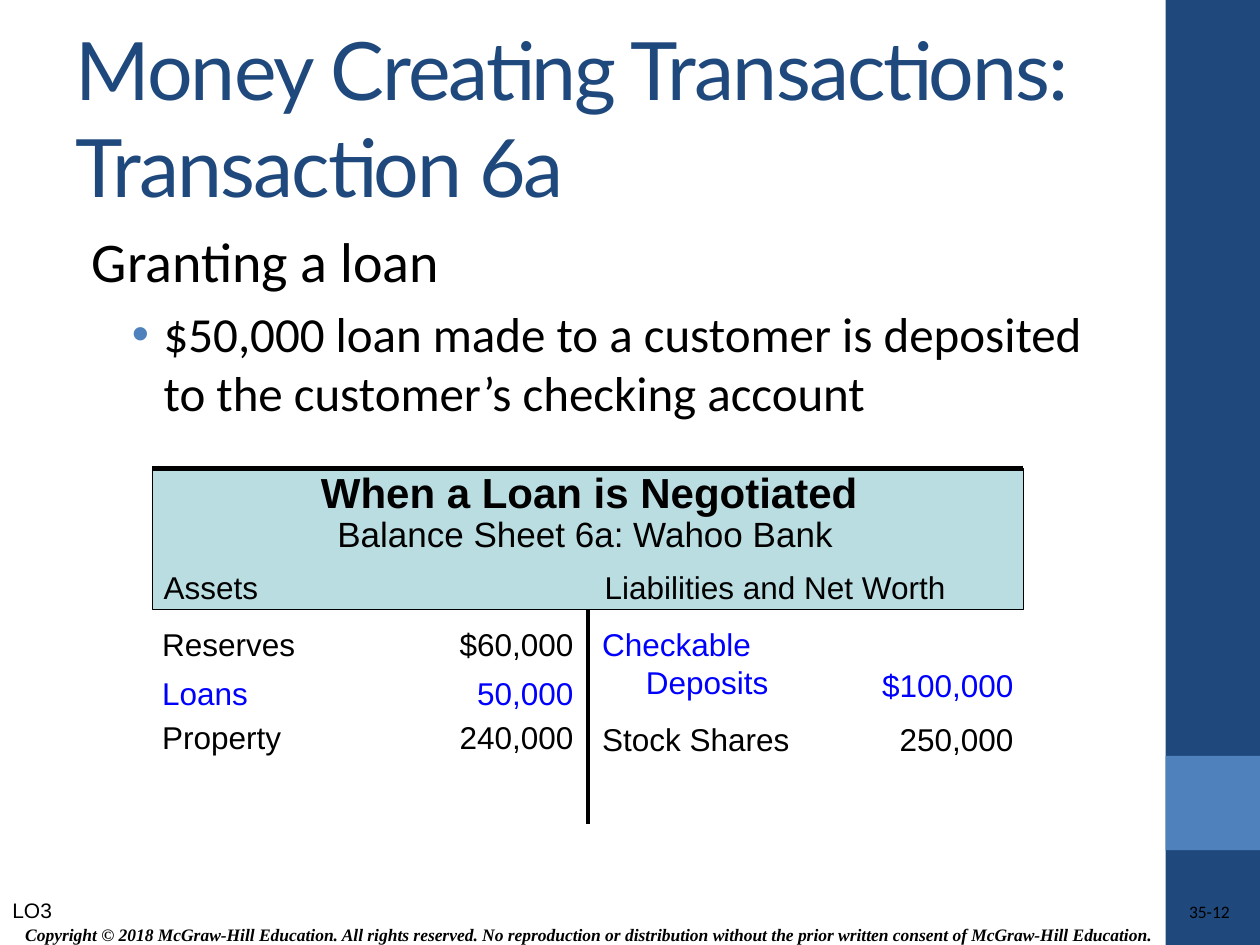
from dataclasses import dataclass

from lxml.etree import SubElement
from pptx import Presentation
from pptx.dml.color import RGBColor
from pptx.enum.shapes import MSO_CONNECTOR, MSO_SHAPE
from pptx.enum.text import MSO_ANCHOR, PP_ALIGN
from pptx.oxml.ns import qn
from pptx.util import Cm, Pt


@dataclass(frozen=True)
class Theme:
    navy: str = "1F497D"
    blue: str = "4F81BD"
    teal: str = "BADDE1"
    black: str = "000000"
    changed: str = "0000FF"
    heading_font: str = "Lato"
    body_font: str = "Calibri"
    sheet_font: str = "Arial"
    legal_font: str = "Times New Roman"
    title: int = 46
    topic: int = 32
    detail: int = 28
    sheet_title: int = 24
    sheet_subtitle: int = 20
    entry: int = 18
    objective: int = 12
    small: int = 10


THEME = Theme()
ENTRY_HEIGHT = 1.02
AMOUNT_WIDTH = 2.9
ASSETS_LEFT, ASSETS_RIGHT = 3.02, 11.81
LIABILITIES_LEFT, LIABILITIES_RIGHT = 11.89, 20.68


def set_all(target, values):
    for name, value in values.items():
        setattr(target, name, value)


def add_words(paragraph, words, size, font, color=THEME.black, **style):
    run = paragraph.add_run()
    run.text = words
    set_all(run.font, {"size": Pt(size), "name": font, **style})
    run.font.color.rgb = RGBColor.from_string(color)
    return run


def add_frame(slide, left, top, width, height, **layout):
    box = slide.shapes.add_textbox(Cm(left), Cm(top), Cm(width), Cm(height))
    set_all(box.text_frame, {"word_wrap": True, **layout})
    return box.text_frame


def add_rectangle(slide, left, top, width, height, fill, outline=None):
    rectangle = slide.shapes.add_shape(
        MSO_SHAPE.RECTANGLE, Cm(left), Cm(top), Cm(width), Cm(height))
    rectangle.shadow.inherit = False
    rectangle.fill.solid()
    rectangle.fill.fore_color.rgb = RGBColor.from_string(fill)
    if outline:
        rectangle.line.color.rgb = RGBColor.from_string(outline)
        rectangle.line.width = Pt(0.75)
    else:
        rectangle.line.fill.background()
    return rectangle


def add_rule(slide, start, end, weight):
    rule = slide.shapes.add_connector(
        MSO_CONNECTOR.STRAIGHT, *(Cm(value) for value in start + end))
    rule.line.color.rgb = RGBColor.from_string(THEME.black)
    rule.line.width = Pt(weight)
    SubElement(rule._element.spPr, qn("a:effectLst"))
    return rule


def indent(paragraph, margin, hanging=0.0):
    properties = paragraph._p.get_or_add_pPr()
    properties.set("marL", str(Cm(margin)))
    properties.set("indent", str(Cm(-hanging)))
    return properties


def add_bullet(properties):
    color = SubElement(properties, qn("a:buClr"))
    SubElement(color, qn("a:srgbClr")).set("val", THEME.blue)
    SubElement(properties, qn("a:buFont")).set("typeface", THEME.sheet_font)
    SubElement(properties, qn("a:buChar")).set("char", "•")


def add_entry(slide, words, left, top, width, color=THEME.black,
              size=THEME.entry, height=ENTRY_HEIGHT, **style):
    frame = add_frame(slide, left, top, width, height, word_wrap=False)
    add_words(frame.paragraphs[0], words, size, THEME.sheet_font, color, **style)
    return frame


def add_amount(slide, words, right, top, color, width=AMOUNT_WIDTH):
    frame = add_entry(slide, words, right - width, top, width, color)
    frame.paragraphs[0].alignment = PP_ALIGN.RIGHT


def add_side_panel(slide):
    add_rectangle(slide, 23.5, 0, 1.9, 19.05, THEME.navy)
    add_rectangle(slide, 23.5, 15.24, 1.9, 1.9, THEME.blue)


def add_footer(slide):
    legal = add_frame(slide, 0.15, 18.49, 23.42, 0.71,
                      vertical_anchor=MSO_ANCHOR.MIDDLE).paragraphs[0]
    legal.alignment = PP_ALIGN.CENTER
    add_words(legal, "Copyright © 2018 McGraw-Hill Education. All rights reserved. "
              "No reproduction or distribution without the prior written consent "
              "of McGraw-Hill Education.",
              THEME.small, THEME.legal_font, bold=True, italic=True)
    page = add_frame(slide, 19.84, 18.16, 4.95, 0.51, margin_left=0, margin_top=0,
                     margin_right=0, margin_bottom=0).paragraphs[0]
    page.alignment = PP_ALIGN.RIGHT
    add_words(page, "35-12", THEME.small, THEME.body_font)
    objective = add_frame(slide, 0, 17.96, 2.67, 0.76)
    add_words(objective.paragraphs[0], "LO3", THEME.objective, THEME.sheet_font)


def add_title(slide):
    frame = add_frame(slide, 1.27, 0.76, 21.16, 3.18,
                      vertical_anchor=MSO_ANCHOR.MIDDLE)
    title = add_words(frame.paragraphs[0],
                      "Money Creating Transactions: Transaction 6a",
                      THEME.title, THEME.heading_font, THEME.navy)
    title._r.get_or_add_rPr().set("spc", "-100")


def add_explanation(slide):
    frame = add_frame(slide, 1.27, 4.45, 21.16, 13.34)
    topic = frame.paragraphs[0]
    indent(topic, 0.97, 0.64)
    add_words(topic, "Granting a loan", THEME.topic, THEME.body_font)
    detail = frame.add_paragraph()
    set_all(detail, {"level": 1, "space_before": Pt(0.2 * THEME.detail)})
    add_bullet(indent(detail, 1.78, 0.64))
    add_words(detail, "$50,000 loan made to a customer is deposited "
              "to the customer’s checking account", THEME.detail, THEME.body_font)


def add_balance_sheet(slide):
    header = add_rectangle(slide, 3.07, 9.45, 17.56, 2.84, THEME.teal, THEME.black)
    divider = add_rule(slide, (11.85, 12.29), (11.85, 16.61), 2.25)
    divider.begin_connect(header, 2)
    add_rule(slide, (3.07, 9.45), (20.63, 9.45), 3)

    add_entry(slide, "When a Loan is Negotiated", 6.22, 9.27, 11.43,
              size=THEME.sheet_title, height=1.3, bold=True)
    add_entry(slide, "Balance Sheet 6a: Wahoo Bank", 6.55, 10.21, 10.59,
              size=THEME.sheet_subtitle, height=1.12)
    add_entry(slide, "Assets", 3.05, 11.33, 2.41)
    add_entry(slide, "Liabilities and Net Worth", 11.94, 11.33, 7.39)

    assets = [
        ("Reserves", 3.2, "$60,000", 12.47, THEME.black),
        ("Loans", 2.24, "50,000", 13.46, THEME.changed),
        ("Property", 2.92, "240,000", 14.35, THEME.black),
    ]
    for label, label_width, amount, top, color in assets:
        add_entry(slide, label, ASSETS_LEFT, top, label_width, color)
        add_amount(slide, amount, ASSETS_RIGHT, top, color)

    deposits = add_entry(slide, "Checkable", LIABILITIES_LEFT, 12.47, 3.86,
                         THEME.changed, height=1.78)
    continuation = deposits.add_paragraph()
    indent(continuation, 0.88)
    add_words(continuation, "Deposits", THEME.entry, THEME.sheet_font, THEME.changed)
    add_amount(slide, "$100,000", LIABILITIES_RIGHT, 13.31, THEME.changed, width=3.2)
    add_entry(slide, "Stock Shares", LIABILITIES_LEFT, 14.4, 4.29)
    add_amount(slide, "250,000", LIABILITIES_RIGHT, 14.4, THEME.black)


def main():
    presentation = Presentation()
    set_all(presentation, {"slide_width": Cm(25.4), "slide_height": Cm(19.05)})
    slide = presentation.slides.add_slide(presentation.slide_layouts[6])
    add_side_panel(slide)
    add_footer(slide)
    add_title(slide)
    add_explanation(slide)
    add_balance_sheet(slide)
    presentation.save("out.pptx")


if __name__ == "__main__":
    main()
